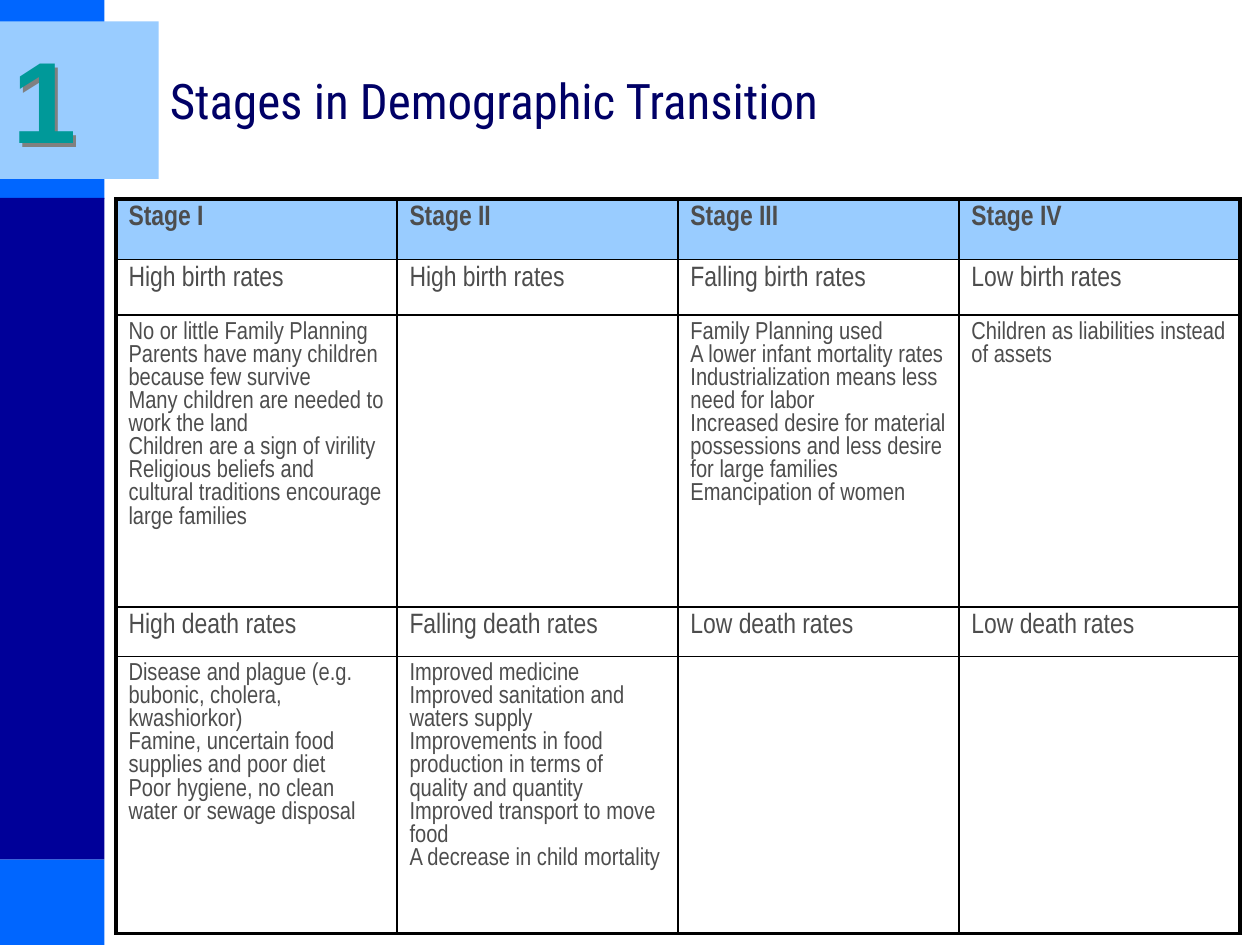
import pptx
import pptx.dml.color
import pptx.enum.shapes
import pptx.enum.text
import pptx.oxml
import pptx.oxml.ns
import pptx.util
from pptx.util import Inches

BANDS = [
    (0, 6.82, 0.83, 0.68, "0066FF"),
    (0, 0, 0.83, 1.58, "0066FF"),
    (0, 1.57, 0.83, 5.25, "000099"),
    (0, 0.17, 1.26, 1.25, "99CCFF"),
]
COLUMN_WIDTH = 2.23
ROW_HEIGHTS = [0.48, 0.44, 2.32, 0.39, 2.08]
ROW_SIZES = [16, 16, 14, 16, 14]
STAGES = [
    [["Stage I"], ["Stage II"], ["Stage III"], ["Stage IV"]],
    [["High birth rates"], ["High birth rates"], ["Falling birth rates"], ["Low birth rates"]],
    [
        [
            "No or little Family Planning",
            "Parents have many children because few survive",
            "Many children are needed to work the land",
            "Children are a sign of virility",
            "Religious beliefs and cultural traditions encourage large families",
        ],
        [],
        [
            "Family Planning used",
            "A lower infant mortality rates",
            "Industrialization means less need for labor",
            "Increased desire for material possessions and less desire for large families",
            "Emancipation of women",
        ],
        ["Children as liabilities instead of assets"],
    ],
    [["High death rates"], ["Falling death rates"], ["Low death rates"], ["Low death rates"]],
    [
        [
            "Disease and plague (e.g. bubonic, cholera, kwashiorkor)",
            "Famine, uncertain food supplies and poor diet",
            "Poor hygiene, no clean water or sewage disposal",
        ],
        [
            "Improved medicine",
            "Improved sanitation and waters supply",
            "Improvements in food production in terms of quality and quantity",
            "Improved transport to move food",
            "A decrease in child mortality",
        ],
        [],
        [],
    ],
]


def color(value):
    return pptx.dml.color.RGBColor.from_string(value)


def write_text(paragraph, text, *, size, font, fill, bold=False):
    run = paragraph.add_run()
    run.text = text
    run.font.size = pptx.util.Pt(size)
    run.font.name = font
    run.font.bold = bold
    run.font.color.rgb = color(fill)


def add_band(slide, left, top, width, height, fill):
    shape = slide.shapes.add_shape(
        pptx.enum.shapes.MSO_SHAPE.RECTANGLE,
        Inches(left), Inches(top), Inches(width), Inches(height))
    shape.shadow.inherit = False
    shape.fill.solid()
    shape.fill.fore_color.rgb = color(fill)
    shape.line.fill.background()


def add_label(slide, left, top, width, height, text, **text_format):
    text_box = slide.shapes.add_textbox(
        Inches(left), Inches(top), Inches(width), Inches(height))
    frame = text_box.text_frame
    frame.word_wrap = True
    frame.vertical_anchor = pptx.enum.text.MSO_ANCHOR.MIDDLE
    write_text(frame.paragraphs[0], text, **text_format)
    return text_box


def add_shadow(text_box):
    """Give an unfilled text box a shadow, which falls from its text."""
    text_box._element.spPr.append(pptx.oxml.parse_xml(
        f'<a:effectLst {pptx.oxml.ns.nsdecls("a")}>'
        '<a:outerShdw dist="35921" dir="2700000" algn="ctr" rotWithShape="0">'
        '<a:srgbClr val="808080"/></a:outerShdw></a:effectLst>'))


def set_borders(cell, outer_sides):
    """Draw thin borders, with heavy ones on the given outer sides."""
    properties = cell._tc.get_or_add_tcPr()
    for side in "LRTB":
        width = pptx.util.Pt(2.25 if side in outer_sides else 1)
        properties.append(pptx.oxml.parse_xml(
            f'<a:ln{side} {pptx.oxml.ns.nsdecls("a")} w="{width}">'
            f'<a:solidFill><a:srgbClr val="000000"/></a:solidFill></a:ln{side}>'))


def fill_cell(cell, lines, size, is_header):
    if is_header:
        cell.fill.solid()
        cell.fill.fore_color.rgb = color("99CCFF")
    else:
        cell.fill.background()
    frame = cell.text_frame
    for index, line in enumerate(lines):
        paragraph = frame.add_paragraph() if index else frame.paragraphs[0]
        write_text(paragraph, line, size=size, font="Arial Narrow",
                   fill="4D4D4D", bold=is_header)


def add_stage_table(slide, left, top):
    row_count, column_count = len(STAGES), len(STAGES[0])
    table = slide.shapes.add_table(
        row_count, column_count, Inches(left), Inches(top),
        Inches(COLUMN_WIDTH * column_count), Inches(sum(ROW_HEIGHTS))).table
    table.first_row = False
    table.horz_banding = False
    for column in table.columns:
        column.width = Inches(COLUMN_WIDTH)
    for row_index, row in enumerate(STAGES):
        table.rows[row_index].height = Inches(ROW_HEIGHTS[row_index])
        for column_index, lines in enumerate(row):
            edges = {
                "L": column_index == 0,
                "R": column_index == column_count - 1,
                "T": row_index == 0,
                "B": row_index == row_count - 1,
            }
            cell = table.cell(row_index, column_index)
            set_borders(cell, [side for side, is_outer in edges.items() if is_outer])
            fill_cell(cell, lines, ROW_SIZES[row_index], is_header=row_index == 0)


def main():
    presentation = pptx.Presentation()
    presentation.slide_width = Inches(10)
    presentation.slide_height = Inches(7.5)
    slide = presentation.slides.add_slide(presentation.slide_layouts[6])
    for band in BANDS:
        add_band(slide, *band)
    add_label(slide, 1.25, 0.17, 8.58, 1.25, "Stages in Demographic Transition",
              size=28, font="Roboto Condensed", fill="000066")
    add_stage_table(slide, 0.92, 1.58)
    number = add_label(slide, 0, 0.17, 0.92, 1.21, "1",
                       size=66, font="Arial", fill="009999", bold=True)
    add_shadow(number)
    presentation.save("out.pptx")


if __name__ == "__main__":
    main()
